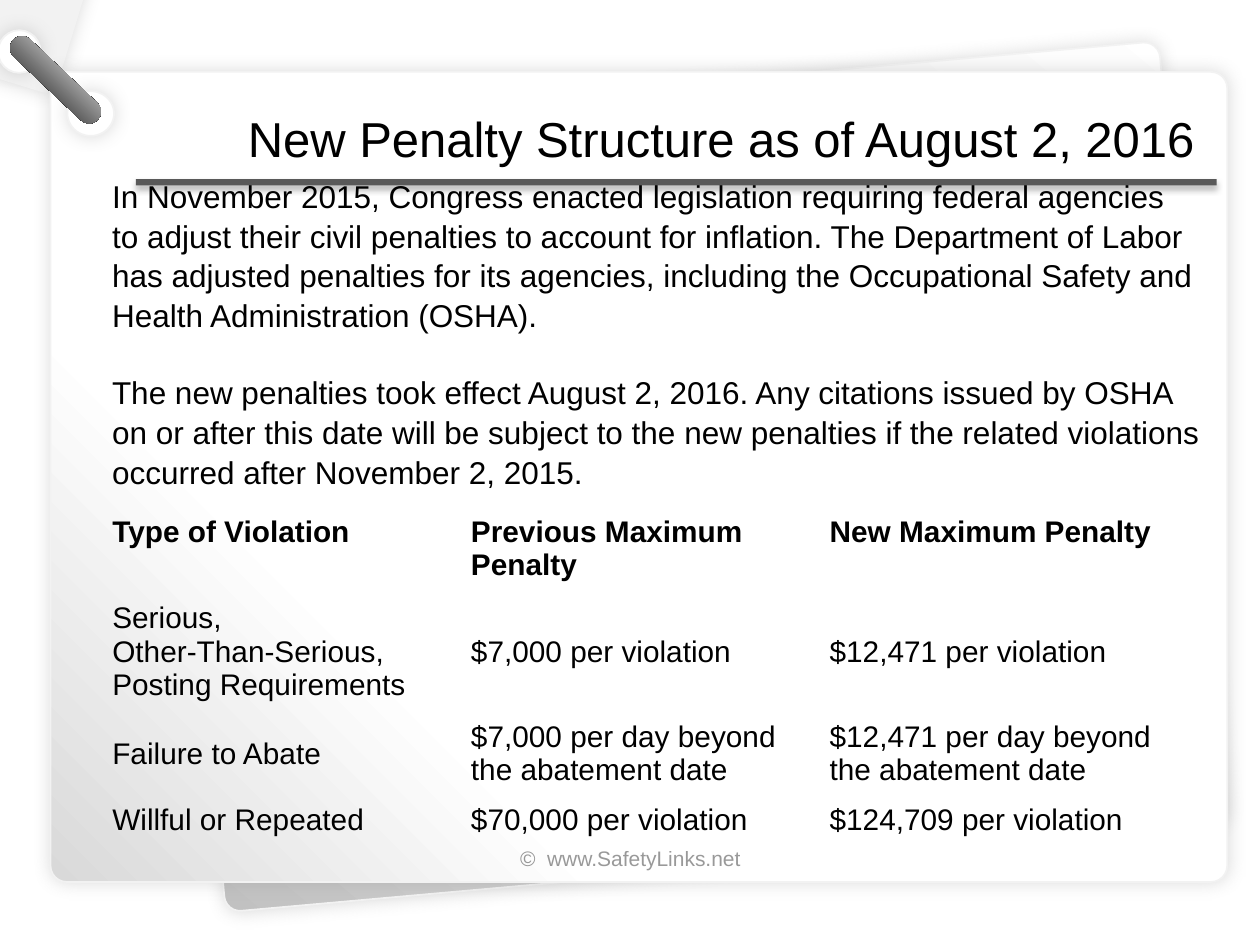
from dataclasses import dataclass
from typing import Optional

from lxml import etree
from pptx import Presentation
from pptx import util as u
from pptx.dml.color import RGBColor
from pptx.enum import shapes, text
from pptx.oxml.ns import qn

COLORS = {
    "ink": "000000", "rule": "595959", "edge": "F2F2F2", "white": "FFFFFF",
    "silver": "BFBFBF", "mist": "D9D9D9", "steel": "0D0D0D", "shade": "808080",
}
NO_GRID_STYLE = "{2D5ABB26-0587-4C30-8999-92F81FD0307C}"


@dataclass
class Shadow:
    color: str
    opacity: int
    blur: float
    distance: float = 0
    direction: int = 0


@dataclass
class Panel:
    kind: shapes.MSO_SHAPE
    box: tuple
    stops: tuple
    angle: int = 45
    rotation: float = 0
    corner: Optional[float] = None
    edge: Optional[str] = "edge"
    shadow: Optional[Shadow] = None


SOFT = Shadow("shade", 28, 10)
ROUND, OVAL, RECT = (shapes.MSO_SHAPE.ROUNDED_RECTANGLE, shapes.MSO_SHAPE.OVAL,
                     shapes.MSO_SHAPE.RECTANGLE)
WHITE = ((0, "white"),)
PANELS = (
    Panel(ROUND, (3.81, 1.7, 20.29, 15.82),
          ((0, "silver"), (64, "edge"), (100, "white")),
          rotation=354.9, corner=0.02, shadow=SOFT),
    Panel(ROUND, (-6.76, -6.5, 9.09, 7.24), ((0, "mist"), (45, "edge")),
          rotation=17, corner=0.03, shadow=SOFT),
    Panel(OVAL, (-0.04, 0.61, 0.86, 0.86), WHITE, shadow=SOFT),
    Panel(ROUND, (1.02, 1.45, 23.72, 16.33), ((0, "mist"), (28, "white")),
          corner=0.02, shadow=SOFT),
    Panel(OVAL, (1.36, 1.84, 0.94, 0.9), WHITE, shadow=SOFT),
    Panel(ROUND, (-0.05, 1.37, 2.34, 0.48),
          ((0, "silver"), (16, "steel"), (85, "edge")),
          angle=90, rotation=43.4, corner=0.5, edge=None),
    Panel(RECT, (2.74, 3.61, 21.79, 0.13), ((0, "rule"),), edge=None,
          shadow=Shadow("ink", 32, 3.5, 2.2, 90)),
)

TITLE = "New Penalty Structure as of August 2, 2016"
PARAGRAPHS = (
    "In November 2015, Congress enacted legislation requiring federal agencies\v"
    "to adjust their civil penalties to account for inflation. The Department of Labor\v"
    "has adjusted penalties for its agencies, including the Occupational Safety and\v"
    "Health Administration (OSHA).",
    "The new penalties took effect August 2, 2016. Any citations issued by OSHA\v"
    "on or after this date will be subject to the new penalties if the related violations\v"
    "occurred after November 2, 2015.",
)
PENALTIES = (
    ("Type of Violation", "Previous Maximum Penalty", "New Maximum Penalty"),
    ("Serious,\vOther-Than-Serious,\vPosting Requirements",
     "$7,000 per violation", "$12,471 per violation"),
    ("Failure to Abate", "$7,000 per day beyond the abatement date",
     "$12,471 per day beyond the abatement date"),
    ("Willful or Repeated", "$70,000 per violation", "$124,709 per violation"),
)
ROW_HEIGHTS = (2.4, 2.41, 1.65, 0.97)
COLUMN_WIDTH = 7.23


def rgb(name: str) -> RGBColor:
    return RGBColor.from_string(COLORS[name])


def lengths(box: tuple) -> list:
    return [u.Cm(value) for value in box]


def apply(target, values: dict) -> None:
    for name, value in values.items():
        setattr(target, name, value)


def add_color(parent, name: str, opacity: int = 100) -> None:
    color = etree.SubElement(parent, qn("a:srgbClr"), val=COLORS[name])
    if opacity < 100:
        etree.SubElement(color, qn("a:alpha"), val=str(opacity * 1000))


def fill_panel(shape, panel: Panel) -> None:
    if len(panel.stops) == 1:
        shape.fill.solid()
        shape.fill.fore_color.rgb = rgb(panel.stops[0][1])
        return
    shape.fill.gradient()
    shape.fill.gradient_angle = panel.angle
    stop_list = shape.element.spPr.find(qn("a:gradFill")).find(qn("a:gsLst"))
    for stop in list(stop_list):
        stop_list.remove(stop)
    for position, name in panel.stops:
        stop = etree.SubElement(stop_list, qn("a:gs"), pos=str(position * 1000))
        add_color(stop, name)


def draw_panel(slide, panel: Panel) -> None:
    shape = slide.shapes.add_shape(panel.kind, *lengths(panel.box))
    shape.rotation = panel.rotation
    if panel.corner is not None:
        shape.adjustments[0] = panel.corner
    fill_panel(shape, panel)
    if panel.edge:
        shape.line.color.rgb = rgb(panel.edge)
        shape.line.width = u.Pt(1)
    else:
        shape.line.fill.background()
    shape.shadow.inherit = False
    if panel.shadow:
        effects = shape.element.spPr.find(qn("a:effectLst"))
        outer = etree.SubElement(
            effects, qn("a:outerShdw"), blurRad=str(u.Pt(panel.shadow.blur)),
            dist=str(u.Pt(panel.shadow.distance)),
            dir=str(panel.shadow.direction * 60000), rotWithShape="0")
        add_color(outer, panel.shadow.color, panel.shadow.opacity)


def write(paragraph, content: str, size: float, bold: bool = False, **layout) -> None:
    paragraph.text = content
    apply(paragraph, layout)
    for run in paragraph.runs:
        apply(run.font, {"name": "Arial", "size": u.Pt(size), "bold": bold})
        run.font.color.rgb = rgb("ink")


def add_footer(slide) -> None:
    frame = slide.shapes.add_textbox(*lengths((9.32, 16.92, 6.78, 0.76))).text_frame
    frame.word_wrap = True
    paragraph = frame.paragraphs[0]
    write(paragraph, "©  www.SafetyLinks.net", 12, alignment=text.PP_ALIGN.CENTER)
    color = next(paragraph.runs[0].font._element.iter(qn("a:srgbClr")))
    etree.SubElement(color, qn("a:alpha"), val="40000")


def add_penalty_table(slide) -> None:
    box = (2.01, 9.53, COLUMN_WIDTH * 3, sum(ROW_HEIGHTS))
    table = slide.shapes.add_table(len(PENALTIES), 3, *lengths(box)).table
    apply(table, {"first_row": False, "horz_banding": False})
    table._tbl.tblPr.find(qn("a:tableStyleId")).text = NO_GRID_STYLE
    for column in table.columns:
        column.width = u.Cm(COLUMN_WIDTH)
    for index, (height, entries) in enumerate(zip(ROW_HEIGHTS, PENALTIES)):
        table.rows[index].height = u.Cm(height)
        for cell, content in zip(table.rows[index].cells, entries):
            cell.fill.background()
            cell.vertical_anchor = text.MSO_ANCHOR.MIDDLE
            write(cell.text_frame.paragraphs[0], content, 17, bold=index == 0)
    apply(table.cell(0, 1), {"vertical_anchor": text.MSO_ANCHOR.BOTTOM,
                             "margin_bottom": u.Cm(0.2)})


def place_title(slide) -> None:
    title = slide.shapes.title
    apply(title, dict(zip(("left", "top", "width", "height"),
                          lengths((2.74, 2.11, 21.59, 1.35)))))
    apply(title.text_frame, {"vertical_anchor": text.MSO_ANCHOR.MIDDLE,
                             "auto_size": text.MSO_AUTO_SIZE.NONE})
    write(title.text_frame.paragraphs[0], TITLE, 28, alignment=text.PP_ALIGN.RIGHT)
    slide.shapes._spTree.append(title.element)


def add_explanation(slide) -> None:
    frame = slide.shapes.add_textbox(*lengths((2.01, 3.51, 22.63, 6.4))).text_frame
    apply(frame, {"word_wrap": False, "vertical_anchor": text.MSO_ANCHOR.MIDDLE})
    for index, content in enumerate(PARAGRAPHS):
        paragraph = frame.add_paragraph() if index else frame.paragraphs[0]
        write(paragraph, content, 18, line_spacing=1.05,
              space_before=u.Pt(21.5 if index else 0))


def main() -> None:
    presentation = Presentation()
    apply(presentation, {"slide_width": u.Cm(25.4), "slide_height": u.Cm(19.05)})
    slide = presentation.slides.add_slide(presentation.slide_layouts[5])
    for panel in PANELS:
        draw_panel(slide, panel)
    add_footer(slide)
    add_penalty_table(slide)
    place_title(slide)
    add_explanation(slide)
    presentation.save("out.pptx")


if __name__ == "__main__":
    main()
